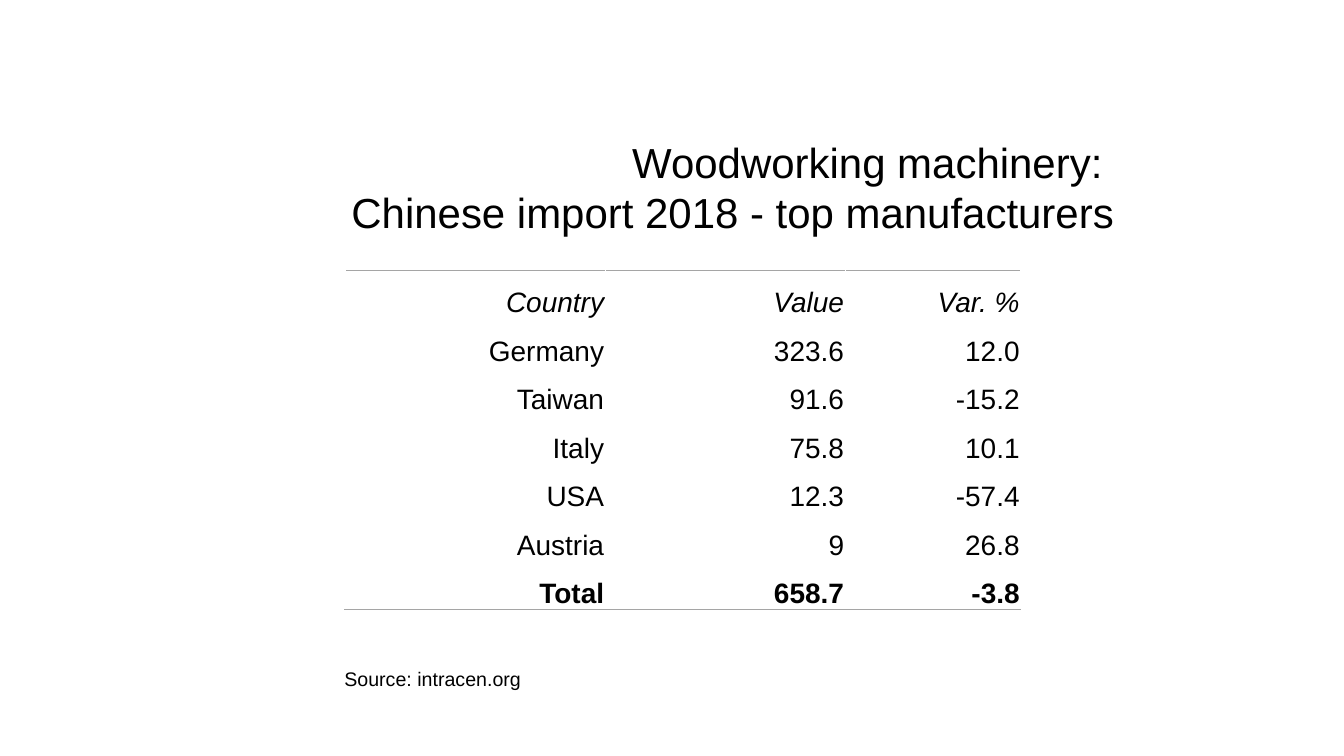
from dataclasses import dataclass

from copy import deepcopy
from lxml.etree import SubElement
from pptx import Presentation
from pptx.dml.color import RGBColor
from pptx.enum.text import MSO_ANCHOR as Anchor, MSO_AUTO_SIZE as AutoSize, PP_ALIGN as Align
from pptx.oxml.ns import qn
from pptx.oxml import parse_xml
from pptx.util import Pt

FONT = "Arial"
BLACK = "000000"
RULE_GREY = "A5A5A5"
COLUMN_WIDTHS = (186, 171.5, 125.5)
ROW_HEIGHT = 34.66


@dataclass
class ImportRow:
    country: str
    value: str
    variation: str
    bold: bool = False
    italic: bool = False
    rule: str = ""  # side with a line: "T" or "B"


IMPORTS = [
    ImportRow("Country", "Value", "Var. %", italic=True, rule="T"),
    ImportRow("Germany", "323.6", "12.0"),
    ImportRow("Taiwan", "91.6", "-15.2"),
    ImportRow("Italy", "75.8", "10.1"),
    ImportRow("USA", "12.3", "-57.4"),
    ImportRow("Austria", "9", "26.8"),
    ImportRow("Total", "658.7", "-3.8", bold=True, rule="B"),
]


def color(hex_code: str) -> RGBColor:
    return RGBColor.from_string(hex_code)


def write(frame, text: str, *, size: float, align=Align.LEFT,
          bold: bool = False, italic: bool = False) -> None:
    """Fill the first paragraph; a newline becomes a line break."""
    paragraph = frame.paragraphs[0]
    paragraph.text = text
    paragraph.alignment = align
    for run in paragraph.runs:
        run.font.name, run.font.size = FONT, Pt(size)
        run.font.bold, run.font.italic = bold, italic
        run.font.color.rgb = color(BLACK)
    for line_break in paragraph._p.findall(qn("a:br")):
        line_break.append(deepcopy(paragraph.runs[0]._r.rPr))


def add_rule(cell, side: str) -> None:
    """Draw a line on one side of a cell."""
    line = parse_xml(
        f'<a:ln{side} xmlns:a="http://schemas.openxmlformats.org/drawingml/2006/main"/>')
    line.set("w", str(Pt(1)))
    fill = SubElement(line, qn("a:solidFill"))
    SubElement(fill, qn("a:srgbClr")).set("val", RULE_GREY)
    cell._tc.get_or_add_tcPr().insert(0, line)


def add_import_table(slide, left: float, top: float) -> None:
    table = slide.shapes.add_table(
        len(IMPORTS), len(COLUMN_WIDTHS), Pt(left), Pt(top),
        Pt(sum(COLUMN_WIDTHS)), Pt(ROW_HEIGHT * len(IMPORTS))).table
    table.first_row = table.horz_banding = False
    for column, width in zip(table.columns, COLUMN_WIDTHS):
        column.width = Pt(width)
    for row, entry in zip(table.rows, IMPORTS):
        row.height = Pt(ROW_HEIGHT)
        for cell, text in zip(row.cells, (entry.country, entry.value, entry.variation)):
            cell.margin_left = cell.margin_right = cell.margin_top = Pt(0.75)
            cell.margin_bottom = 0
            cell.vertical_anchor = Anchor.BOTTOM
            cell.fill.background()
            write(cell.text_frame, text, size=20, align=Align.RIGHT,
                  bold=entry.bold, italic=entry.italic)
            if entry.rule:
                add_rule(cell, entry.rule)


def main() -> None:
    prs = Presentation()
    prs.slide_width, prs.slide_height = Pt(960.5), Pt(540)
    slide = prs.slides.add_slide(prs.slide_layouts[5])

    # Title
    title = slide.shapes.title
    title.left, title.top, title.width, title.height = Pt(224), Pt(93.6), Pt(579.6), Pt(80)
    title.text_frame.word_wrap = True
    title.text_frame.auto_size = AutoSize.SHAPE_TO_FIT_TEXT
    title.text_frame.vertical_anchor = Anchor.TOP
    write(title.text_frame, "Woodworking machinery: \nChinese import 2018 - top manufacturers",
          size=30, align=Align.RIGHT)

    # Imports by country
    add_import_table(slide, 246.5, 193)

    # Source
    source = slide.shapes.add_textbox(Pt(239), Pt(473), Pt(155.5), Pt(24.5))
    source.text_frame.word_wrap = True
    source.text_frame.auto_size = AutoSize.SHAPE_TO_FIT_TEXT
    write(source.text_frame, "Source: intracen.org", size=14)

    prs.save("out.pptx")


if __name__ == "__main__":
    main()
